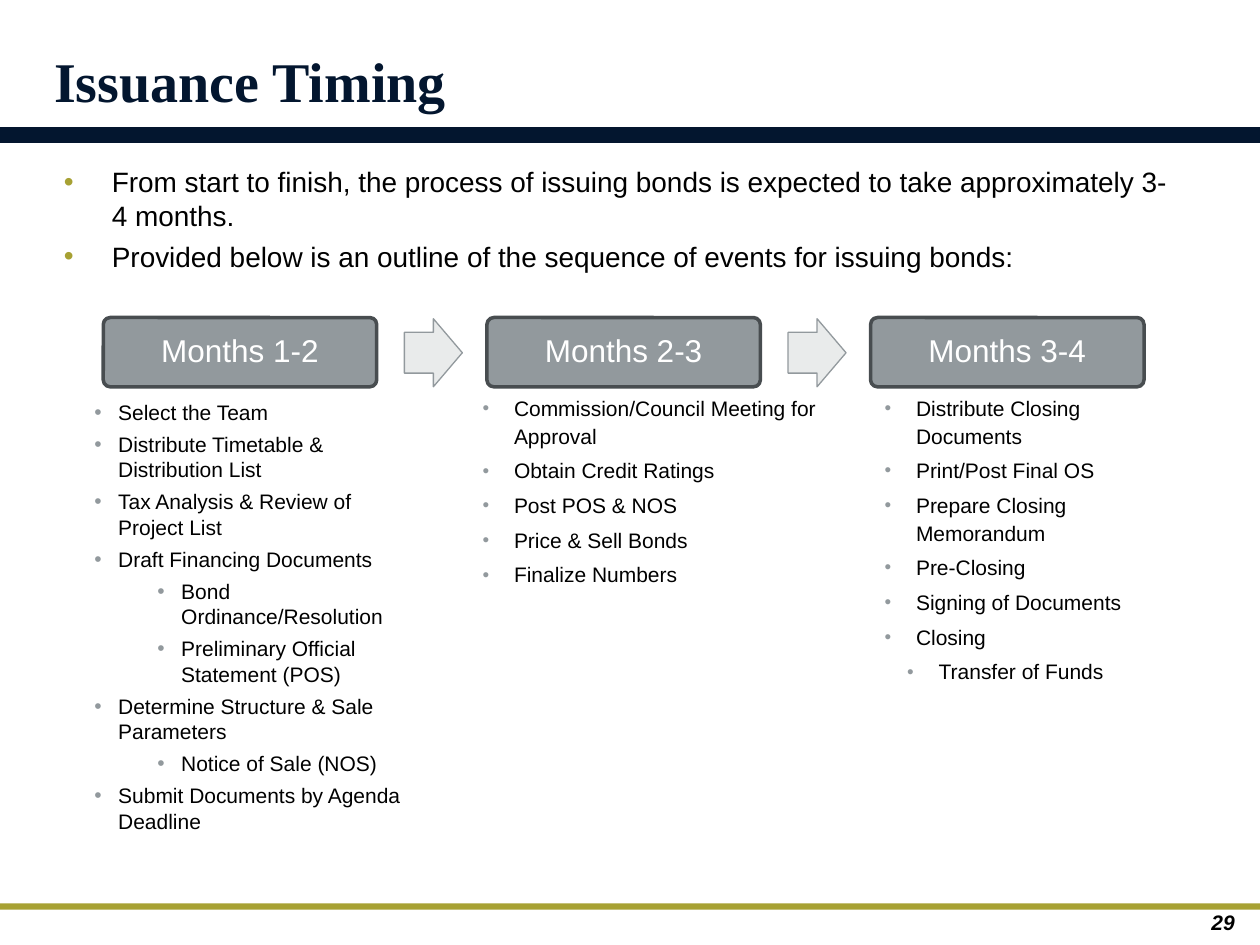
from lxml import etree
from pptx import Presentation
from pptx.dml.color import RGBColor
from pptx.enum import shapes, text
from pptx.oxml import ns
from pptx.util import Inches, Pt

HUES = {"navy": "03162F", "gold": "A7A133", "gray": "92999D", "edge": "484D50",
        "pale": "E9EBEB", "black": "000000", "white": "FFFFFF"}
INTRO = [
    (0, "From start to finish, the process of issuing bonds is expected to take approximately 3-4 months."),
    (0, "Provided below is an outline of the sequence of events for issuing bonds:"),
]
STAGES = ["Months 1-2", "Months 2-3", "Months 3-4"]
FIRST = [
    (0, "Select the Team"),
    (0, "Distribute Timetable & Distribution List"),
    (0, "Tax Analysis & Review of Project List"),
    (0, "Draft Financing Documents"),
    (1, "Bond Ordinance/Resolution"),
    (1, "Preliminary Official Statement (POS)"),
    (0, "Determine Structure & Sale Parameters"),
    (1, "Notice of Sale (NOS)"),
    (0, "Submit Documents by Agenda Deadline"),
]
SECOND = [
    (0, "Commission/Council Meeting for Approval"),
    (0, "Obtain Credit Ratings"),
    (0, "Post POS & NOS"),
    (0, "Price & Sell Bonds"),
    (0, "Finalize Numbers"),
]
THIRD = [
    (0, "Distribute Closing Documents"),
    (0, "Print/Post Final OS"),
    (0, "Prepare Closing Memorandum"),
    (0, "Pre-Closing"),
    (0, "Signing of Documents"),
    (0, "Closing"),
    (1, "Transfer of Funds"),
]
SMALL = {"size": 12, "dot": "gray"}
TIGHT = {**SMALL, "inset": (0, 0), "hang": 0.25, "step": 0.18, "lead": 1.1, "scale": 90}
LISTS = [
    (INTRO, (0.41, 1.26, 9, 1), {"size": 16, "dot": "gold", "hang": 0.38}),
    (FIRST, (0.65, 3.12, 2.73, 3.28), {**SMALL, "hang": 0.19, "step": 0.5}),
    (SECOND, (3.83, 3.12, 2.73, 2.09), TIGHT),
    (THIRD, (7.02, 3.12, 2.39, 1.93), TIGHT),
]
LEFT, TOP, PITCH = 0.82, 2.52, 3.045


def tint(hue):
    return RGBColor.from_string(HUES[hue])


def write(para, words, size, hue, font="Arial", bold=False, slant=False):
    run = para.add_run()
    run.text = words
    face = run.font
    face.name, face.size, face.bold, face.italic = font, Pt(size), bold, slant
    face.color.rgb = tint(hue)


def draw(slide, kind, box, fill, line=None, width=0, adjust=()):
    item = slide.shapes.add_shape(kind, *map(Inches, box))
    item.shadow.inherit = False
    item.fill.solid()
    item.fill.fore_color.rgb = tint(fill)
    if line:
        item.line.color.rgb = tint(line)
        item.line.width = Pt(width)
    else:
        item.line.fill.background()
    for spot, value in enumerate(adjust):
        item.adjustments[spot] = value
    return item


def frame(item, inset, anchor=text.MSO_ANCHOR.TOP):
    body = item.text_frame
    body.word_wrap = True
    body.auto_size = text.MSO_AUTO_SIZE.NONE
    body.vertical_anchor = anchor
    body.margin_left = body.margin_right = Inches(inset[0])
    body.margin_top = body.margin_bottom = Inches(inset[1])
    return body


def bullet(para, indent, hang, dot, scale):
    props = para._p.get_or_add_pPr()
    props.set("marL", str(Inches(indent)))
    props.set("indent", str(-Inches(hang)))
    color = etree.SubElement(props, ns.qn("a:buClr"))
    etree.SubElement(color, ns.qn("a:srgbClr"), val=HUES[dot])
    etree.SubElement(props, ns.qn("a:buSzPct"), val=str(scale * 1000))
    etree.SubElement(props, ns.qn("a:buFont"), typeface="Arial")
    etree.SubElement(props, ns.qn("a:buChar"), char="•")


def outline(slide, rows, box, size, dot, hang, step=0, lead=1.0, scale=100, inset=(0.1, 0.05)):
    body = frame(slide.shapes.add_textbox(*map(Inches, box)), inset)
    for spot, (level, words) in enumerate(rows):
        para = body.add_paragraph() if spot else body.paragraphs[0]
        para.level = level
        para.line_spacing = lead
        para.space_before = Pt(4)
        bullet(para, hang + level * step, hang, dot, scale)
        write(para, words, size, "black")


def main():
    """Build the issuance timing slide."""
    deck = Presentation()
    deck.slide_width, deck.slide_height = Inches(10), Inches(7.5)
    slide = deck.slides.add_slide(deck.slide_layouts[5])
    kinds = shapes.MSO_SHAPE

    draw(slide, kinds.RECTANGLE, (0, 7.17, 10, 0.05), "gold")
    draw(slide, kinds.RECTANGLE, (0, 1.02, 10, 0.1), "navy", "navy", 2)

    title = slide.shapes.title
    title.left, title.top, title.width, title.height = map(Inches, (0.43, 0.32, 8.92, 0.58))
    para = frame(title, (0, 0), text.MSO_ANCHOR.BOTTOM).paragraphs[0]
    para.alignment = text.PP_ALIGN.LEFT
    write(para, "Issuance Timing", 32, "navy", "Times New Roman", bold=True)

    for spot, stage in enumerate(STAGES):
        left = LEFT + spot * PITCH
        card = draw(slide, kinds.ROUNDED_RECTANGLE, (left, TOP, 2.17, 0.55), "gray", "edge", 2, [0.1])
        para = frame(card, (0.07, 0.07), text.MSO_ANCHOR.MIDDLE).paragraphs[0]
        para.alignment = text.PP_ALIGN.CENTER
        para.line_spacing = 0.9
        write(para, stage, 18, "white")
        if spot < len(STAGES) - 1:
            draw(slide, kinds.RIGHT_ARROW, (left + 2.39, TOP + 0.01, 0.46, 0.54),
                 "pale", "gray", 0.75, [0.6, 0.5])

    for rows, box, style in LISTS:
        outline(slide, rows, box, **style)

    page = slide.shapes.add_textbox(*map(Inches, (8.52, 7.14, 1.48, 0.4 - 0.04)))
    para = frame(page, (0.2, 0.05), text.MSO_ANCHOR.MIDDLE).paragraphs[0]
    para.alignment = text.PP_ALIGN.RIGHT
    write(para, "29", 12, "black", bold=True, slant=True)

    deck.save("out.pptx")


if __name__ == "__main__":
    main()
